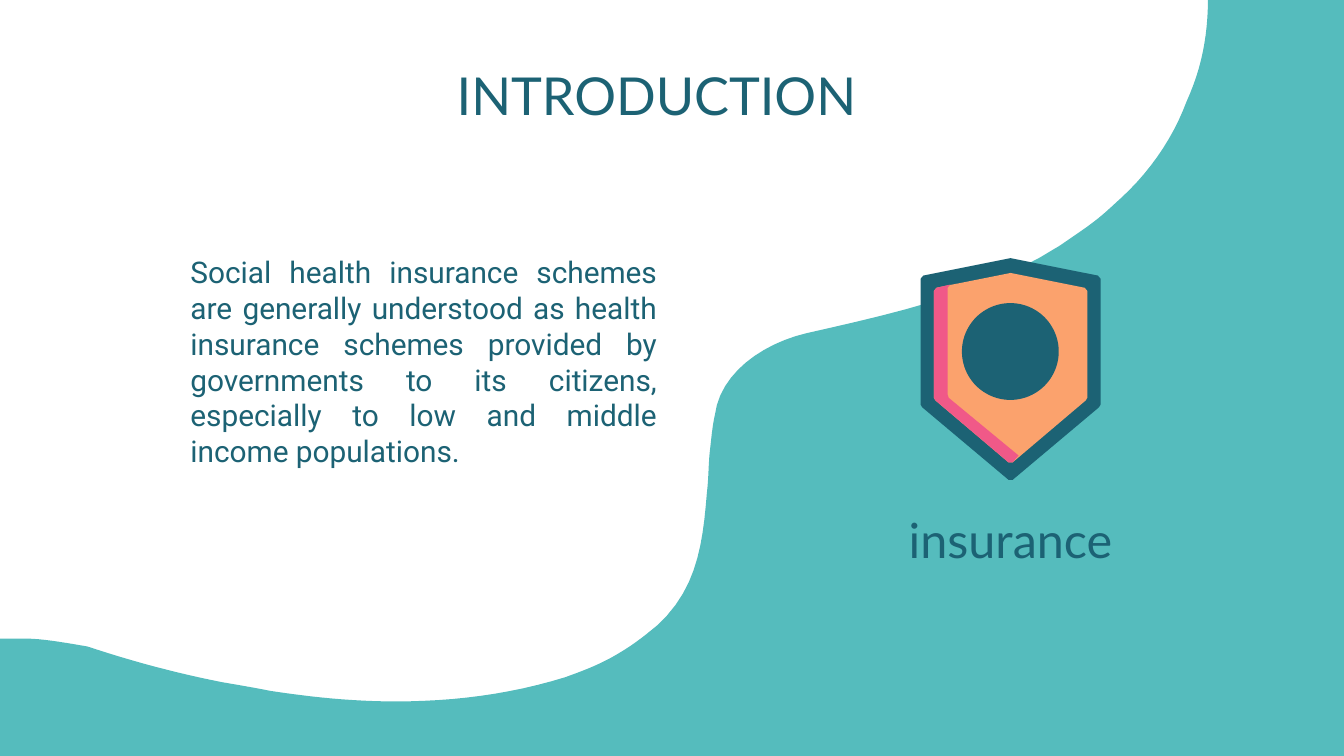
from pptx import Presentation
from pptx.dml.color import RGBColor
from pptx.enum.shapes import MSO_SHAPE
from pptx.enum.text import MSO_ANCHOR, MSO_AUTO_SIZE, PP_ALIGN
from pptx.util import Cm, Pt

TEAL = RGBColor(0x55, 0xBC, 0xBD)
NAVY = RGBColor(0x1C, 0x62, 0x74)
PEACH = RGBColor(0xFB, 0xA2, 0x6D)
PINK = RGBColor(0xF0, 0x59, 0x88)
OVAL = MSO_SHAPE.OVAL
TOP = MSO_ANCHOR.TOP
FIXED = MSO_AUTO_SIZE.NONE
CENTER = PP_ALIGN.CENTER
JUSTIFY = PP_ALIGN.JUSTIFY

WIDE, HIGH = 25.4, 14.29
MID = 19.1
STEPS = 12
BODY = (
    "Social health insurance schemes are generally understood as health "
    "insurance schemes provided by governments to its citizens, especially "
    "to low and middle income populations."
)
START = (22.83, 0)
CURVES = [
    ((22.83, 0.66), (22.71, 1.3), (22.43, 1.91)),
    ((22.15, 2.67), (21.67, 3.33), (21.06, 3.86)),
    ((20.85, 4.06), (20.65, 4.22), (20.4, 4.39)),
    ((18.95, 5.46), (17.15, 5.87), (15.24, 6.3)),
    ((14.4, 6.5), (13.61, 7.06), (13.51, 7.85)),
    ((13.46, 8.08), (13.44, 8.33), (13.41, 8.59)),
    ((13.39, 8.84), (13.39, 9.09), (13.36, 9.32)),
    ((13.28, 10.34), (13.16, 11.3), (12.19, 12.01)),
    ((11.96, 12.19), (11.73, 12.34), (11.48, 12.47)),
    ((11.23, 12.6), (10.97, 12.7), (10.69, 12.8)),
    ((9.63, 13.13), (8.56, 13.26), (7.47, 13.26)),
    ((6.68, 13.26), (5.89, 13.18), (5.11, 13.06)),
    ((4.8, 13), (4.52, 12.95), (4.22, 12.9)),
    ((3.35, 12.73), (2.49, 12.5), (1.65, 12.22)),
    ((1.35, 12.17), (1.07, 12.12), (0.79, 12.09)),
    ((0.61, 12.07), (0.41, 12.07), (0, 12.07)),
]


def bend(a, b, c, d):
    """Return points along a cubic curve, without its start."""
    points = []
    for step in range(1, STEPS + 1):
        t = step / STEPS
        u = 1 - t
        points.append(tuple(
            u**3 * p + 3 * u * u * t * q + 3 * u * t * t * r + t**3 * s
            for p, q, r, s in zip(a, b, c, d)
        ))
    return points


def paint(shape, color):
    """Give a shape a flat fill with no line or shadow."""
    shape.fill.solid()
    shape.fill.fore_color.rgb = color
    shape.line.fill.background()
    shape.shadow.inherit = False


def draw(slide, points, color):
    """Draw a filled outline through points in centimetres."""
    first, *rest = [(Cm(x), Cm(y)) for x, y in points]
    pen = slide.shapes.build_freeform(*first)
    pen.add_line_segments(rest, close=True)
    paint(pen.convert_to_shape(), color)


def wave(slide):
    """Draw the wavy backdrop."""
    points = [START]
    for curve in CURVES:
        points += bend(points[-1], *curve)
    draw(slide, points + [(0, HIGH), (WIDE, HIGH), (WIDE, 0)], TEAL)


def half(width, top, brow, hip, foot):
    """Return the left side of a shield, from top to foot."""
    left = MID - width
    return [
        (MID, top), (left + 0.05, brow), (left, brow + 0.06),
        (left, hip), (left + 0.03, hip + 0.05), (MID - 0.04, foot),
    ]


def flip(points):
    """Return points mirrored about the shield's middle, in reverse."""
    return [(2 * MID - x, y) for x, y in reversed(points)]


def badge(slide):
    """Draw the shield with its shade and disc."""
    rim = half(1.7, 4.88, 5.21, 7.65, 9.07)
    core = half(1.45, 5.16, 5.44, 7.52, 8.74)
    for side, color in ((rim, NAVY), (core, PEACH)):
        draw(slide, side + flip(side[1:]), color)
    shade = [(19.25, 8.61), (17.93, 7.52), (17.91, 7.46), (17.91, 5.44), (17.96, 5.38)]
    draw(slide, core[1:] + flip(core[-1:]) + shade, PINK)
    disc = slide.shapes.add_shape(OVAL, Cm(18.18), Cm(5.73), Cm(1.83), Cm(1.83))
    paint(disc, NAVY)


def write(shape, box, text, font, size, align=CENTER):
    """Place a text shape and set its wording and style."""
    shape.left, shape.top, shape.width, shape.height = map(Cm, box)
    frame = shape.text_frame
    frame.text = text
    frame.word_wrap = True
    frame.auto_size = FIXED
    frame.vertical_anchor = TOP
    frame.margin_left = frame.margin_right = Cm(0.25)
    frame.margin_top = frame.margin_bottom = Cm(0.25)
    para = frame.paragraphs[0]
    para.alignment = align
    para.font.name = font
    para.font.size = Pt(size)
    para.font.color.rgb = NAVY


def label(slide, box, *style):
    """Add a text box."""
    write(slide.shapes.add_textbox(*map(Cm, box)), box, *style)


def main():
    """Build the slide and save it."""
    deck = Presentation()
    deck.slide_width, deck.slide_height = Cm(WIDE), Cm(HIGH)
    slide = deck.slides.add_slide(deck.slide_layouts[5])
    wave(slide)
    label(slide, (3.35, 4.55, 9.32, 6.6), BODY, "Roboto", 16, JUSTIFY)
    write(slide.shapes.title, (5.13, 0.94, 14.55, 1.6), "INTRODUCTION", "Lato", 28)
    badge(slide)
    label(slide, (16.51, 9.4, 5.18, 1.6), "insurance", "Lato", 26)
    deck.save("out.pptx")


if __name__ == "__main__":
    main()
